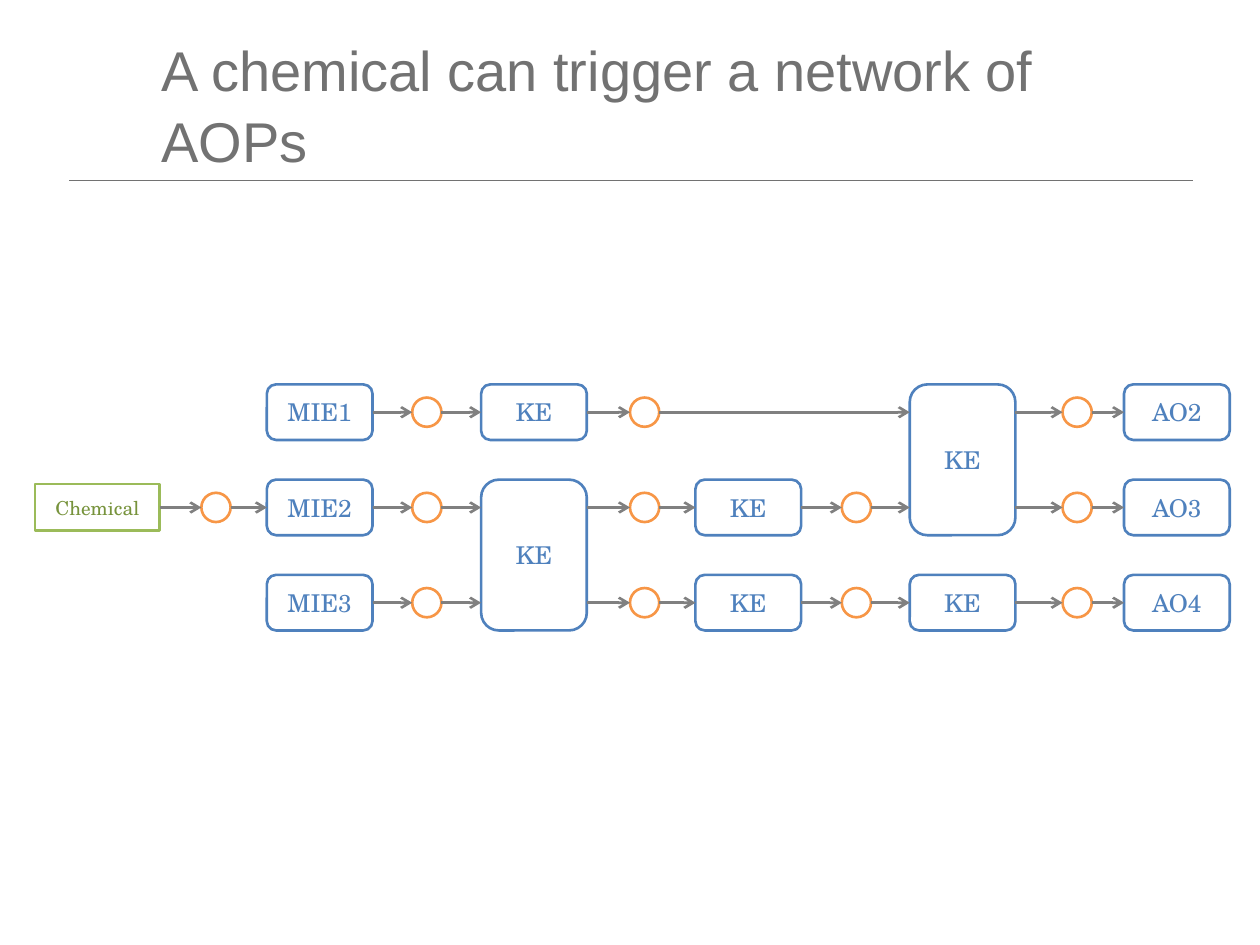
import pptx
import pptx.util
import pptx.dml.color
import pptx.enum.shapes
import pptx.enum.text
import pptx.oxml
import pptx.oxml.ns
from lxml import etree

Cm = pptx.util.Cm
Pt = pptx.util.Pt
RGBColor = pptx.dml.color.RGBColor
MSO_SHAPE = pptx.enum.shapes.MSO_SHAPE
qn = pptx.oxml.ns.qn

WHITE = RGBColor(0xFF, 0xFF, 0xFF)
TITLE_GRAY = RGBColor(0x72, 0x72, 0x72)
ARROW_GRAY = RGBColor(0x80, 0x80, 0x80)
BLUE = RGBColor(0x4F, 0x81, 0xBD)
ORANGE = RGBColor(0xF7, 0x96, 0x46)
GREEN = RGBColor(0x9B, 0xBB, 0x59)
DARK_GREEN = RGBColor(0x77, 0x93, 0x3C)

LEFT, TOP = 5.38, 7.75
COL_STEP, ROW_STEP = 4.32, 1.92
BOX_W, BOX_H = 2.13, 1.12
CIRCLE = 0.59

prs = pptx.Presentation()
prs.slide_width, prs.slide_height = Cm(25.4), Cm(19.05)
s = prs.slides.add_slide(prs.slide_layouts[5])


def add_node(kind, x, y, w, h, line, text="", size=14, color=BLUE):
    sp = s.shapes.add_shape(kind, Cm(x), Cm(y), Cm(w), Cm(h))
    sp.shadow.inherit = False
    sp.fill.solid()
    sp.fill.fore_color.rgb = WHITE
    sp.line.color.rgb = line
    sp.line.width = Pt(1.5)
    if text:
        tf = sp.text_frame
        tf.word_wrap = True
        tf.vertical_anchor = pptx.enum.text.MSO_ANCHOR.MIDDLE
        p = tf.paragraphs[0]
        p.alignment = pptx.enum.text.PP_ALIGN.CENTER
        r = p.add_run()
        r.text = text
        r.font.name = "TeX Gyre Schola"
        r.font.size = Pt(size)
        r.font.color.rgb = color
    return sp


def add_line(x1, x2, y, color, width, arrow=True):
    c = s.shapes.add_connector(pptx.enum.shapes.MSO_CONNECTOR.STRAIGHT, x1, y, x2, y)
    c.line.color.rgb = color
    c.line.width = Pt(width)
    if arrow:
        etree.SubElement(c.line._get_or_add_ln(), qn("a:tailEnd"), type="arrow")
    etree.SubElement(c._element.spPr, qn("a:effectLst"))
    return c


title = s.shapes.title
title.left, title.top, title.width, title.height = Cm(3), Cm(0.66), Cm(20.6), Cm(2.84)
tf = title.text_frame
tf.word_wrap = True
tf.vertical_anchor = pptx.enum.text.MSO_ANCHOR.MIDDLE
p = tf.paragraphs[0]
p.alignment = pptx.enum.text.PP_ALIGN.LEFT
p.line_spacing = 1.05
r = p.add_run()
r.text = "A chemical can trigger a network of AOPs"
r.font.name = "Arial"
r.font.size = Pt(32)
r.font.color.rgb = TITLE_GRAY

add_line(Cm(1.4), Cm(24.05), Cm(3.63), TITLE_GRAY, 0.5, arrow=False)

# name: text, column, first row, rows spanned
events = {
    "MIE1": ("MIE1", 0, 0, 1), "MIE2": ("MIE2", 0, 1, 1), "MIE3": ("MIE3", 0, 2, 1),
    "KE top": ("KE", 1, 0, 1), "KE shared low": ("KE", 1, 1, 2),
    "KE middle": ("KE", 2, 1, 1), "KE bottom": ("KE", 2, 2, 1),
    "KE shared high": ("KE", 3, 0, 2), "KE last": ("KE", 3, 2, 1),
    "AO2": ("AO2", 4, 0, 1), "AO3": ("AO3", 4, 1, 1), "AO4": ("AO4", 4, 2, 1),
}
nodes = {}
for name, (text, col, row, span) in events.items():
    nodes[name] = add_node(MSO_SHAPE.ROUNDED_RECTANGLE, LEFT + col * COL_STEP, TOP + row * ROW_STEP,
                           BOX_W, BOX_H + (span - 1) * ROW_STEP, BLUE, text)
nodes["Chemical"] = add_node(MSO_SHAPE.RECTANGLE, 0.71, TOP + ROW_STEP + 0.09, 2.51, 0.94,
                             GREEN, "Chemical", 11, DARK_GREEN)

circle_x = [4.06, 8.31, 12.7, 16.97, 21.42]
links = [
    ("MIE1", 1, "KE top", 0), ("KE top", 2, "KE shared high", 0), ("KE shared high", 4, "AO2", 0),
    ("Chemical", 0, "MIE2", 1), ("MIE2", 1, "KE shared low", 1), ("KE shared low", 2, "KE middle", 1),
    ("KE middle", 3, "KE shared high", 1), ("KE shared high", 4, "AO3", 1),
    ("MIE3", 1, "KE shared low", 2), ("KE shared low", 2, "KE bottom", 2),
    ("KE bottom", 3, "KE last", 2), ("KE last", 4, "AO4", 2),
]
for source, i, target, row in links:
    a, b = nodes[source], nodes[target]
    mid = TOP + row * ROW_STEP + BOX_H / 2
    circle = add_node(MSO_SHAPE.OVAL, circle_x[i], mid - CIRCLE / 2, CIRCLE, CIRCLE, ORANGE)
    into = add_line(a.left + a.width, circle.left, Cm(mid), ARROW_GRAY, 1.5)
    out = add_line(circle.left + circle.width, b.left, Cm(mid), ARROW_GRAY, 1.5)
    if "shared" not in source:
        into.begin_connect(a, 3)
    if "shared" not in target:
        out.end_connect(b, 1)

prs.save("out.pptx")
